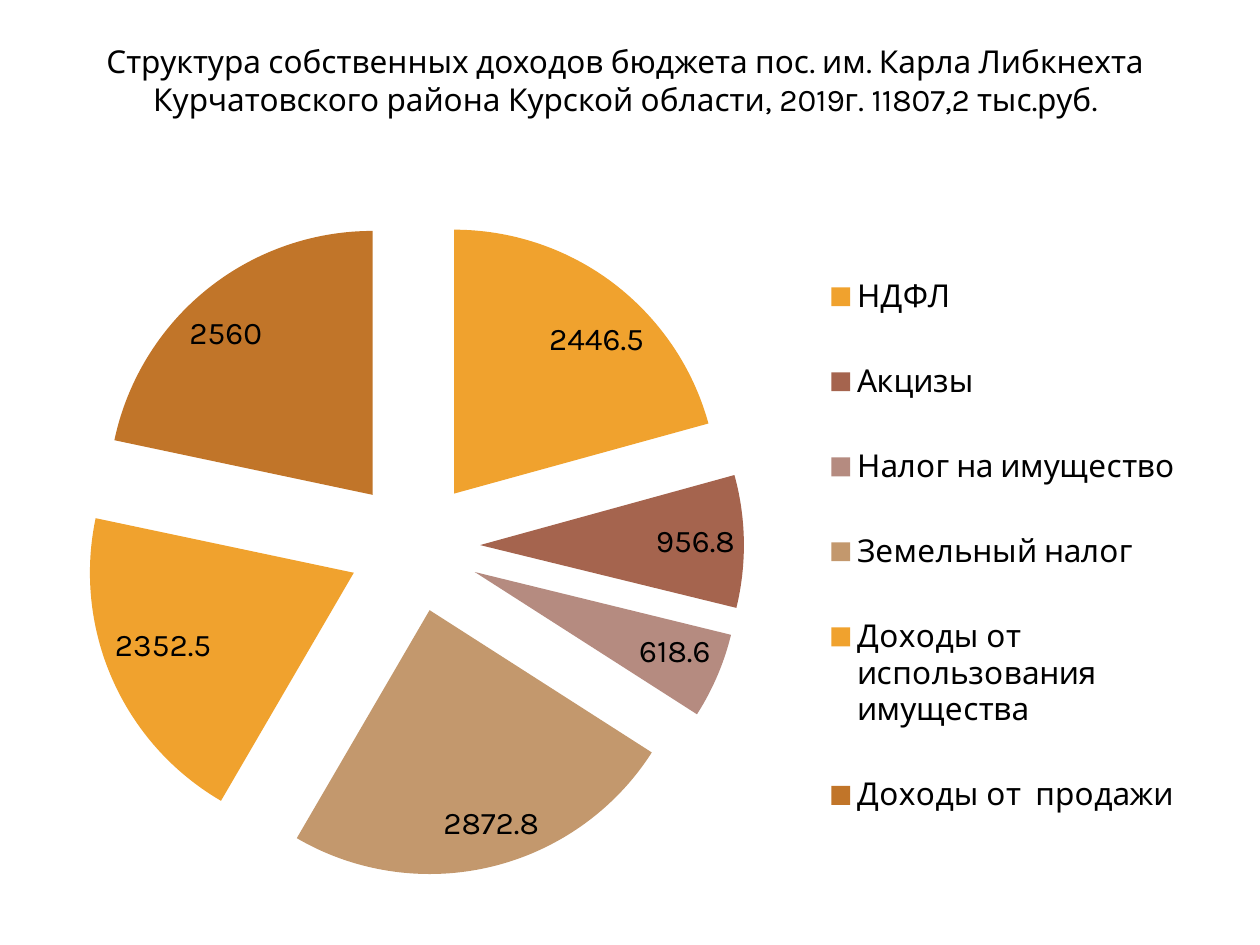
"""Build a slide with an exploded pie chart of local budget revenues."""
from lxml.etree import SubElement
from pptx import Presentation
from pptx.chart.data import CategoryChartData
from pptx.dml.color import RGBColor
from pptx.enum.chart import XL_CHART_TYPE, XL_LABEL_POSITION, XL_LEGEND_POSITION
from pptx.enum.text import MSO_ANCHOR, PP_ALIGN
from pptx.oxml.ns import qn
from pptx.util import Cm, Pt

TITLE = ("Структура собственных доходов бюджета пос. им. Карла Либкнехта "
         "Курчатовского района Курской области, 2019г. 11807,2 тыс.руб.")
BLACK = RGBColor(0, 0, 0)
AMBER = RGBColor(0xF0, 0xA2, 0x2E)
BRICK = RGBColor(0xA5, 0x64, 0x4E)
ROSE = RGBColor(0xB5, 0x8B, 0x80)
SAND = RGBColor(0xC3, 0x98, 0x6D)
RUST = RGBColor(0xC1, 0x75, 0x29)
INCOME = [
    ("НДФЛ", 2446.5, AMBER),
    ("Акцизы", 956.8, BRICK),
    ("Налог на имущество", 618.6, ROSE),
    ("Земельный налог", 2872.8, SAND),
    ("Доходы от использования имущества", 2352.5, AMBER),
    ("Доходы от  продажи", 2560, RUST),
]
FONT = {"name": "Karla", "size": Pt(18), "bold": False}
PIE = {"x": 0.03, "y": 0.03, "w": 0.57, "h": 0.95}
KEY = {"x": 0.65, "y": 0.05, "w": 0.34, "h": 0.91}
BURST = 25


def style(font):
    for name, value in FONT.items():
        setattr(font, name, value)
    font.color.rgb = BLACK


def place(node, area, inner=False):
    layout = node.find(qn("c:layout"))
    if layout is None:
        layout = SubElement(node, qn("c:layout"))
        follow = node.find(qn("c:legendPos"))
        if follow is not None:
            follow.addnext(layout)
        else:
            node.insert(0, layout)
    manual = SubElement(layout, qn("c:manualLayout"))
    modes = [("layoutTarget", "inner")] if inner else []
    modes += [("xMode", "edge"), ("yMode", "edge")]
    for tag, value in modes + list(area.items()):
        SubElement(manual, qn("c:" + tag)).set("val", str(value))


def add_title(slide):
    title = slide.shapes.title
    box = {"left": Cm(0.71), "top": Cm(0.72), "width": Cm(23.8), "height": Cm(1.8)}
    for name, value in box.items():
        setattr(title, name, value)
    frame = title.text_frame
    frame.text = TITLE
    frame.word_wrap = True
    frame.vertical_anchor = MSO_ANCHOR.TOP
    para = frame.paragraphs[0]
    para.alignment = PP_ALIGN.CENTER
    para.line_spacing = 1.0
    style(para.font)


def add_pie(slide):
    data = CategoryChartData()
    data.categories = [name for name, _, _ in INCOME]
    data.add_series("Доходы", [value for _, value, _ in INCOME])
    chart = slide.shapes.add_chart(XL_CHART_TYPE.PIE, Cm(0.94), Cm(3.94),
                                   Cm(23.52), Cm(14), data).chart
    style(chart.font)
    chart.has_title = False
    chart.has_legend = True
    legend = chart.legend
    legend.position = XL_LEGEND_POSITION.RIGHT
    legend.include_in_layout = False
    style(legend.font)

    plot = chart.plots[0]
    plot.vary_by_categories = True
    series = plot.series[0]
    for index, (_, _, color) in enumerate(INCOME):
        fill = series.points[index].format.fill
        fill.solid()
        fill.fore_color.rgb = color
    burst = SubElement(series._element, qn("c:explosion"))
    burst.set("val", str(BURST))
    series._element.find(qn("c:dPt")).addprevious(burst)

    labels = series.data_labels
    labels.show_value = True
    labels.position = XL_LABEL_POSITION.BEST_FIT
    style(labels.font)
    place(chart._chartSpace.chart.plotArea, PIE, True)
    place(legend._element, KEY)


def main():
    deck = Presentation()
    deck.slide_width, deck.slide_height = Cm(25.4), Cm(19.05)
    slide = deck.slides.add_slide(deck.slide_layouts[5])
    add_title(slide)
    add_pie(slide)
    deck.save("out.pptx")


if __name__ == "__main__":
    main()
